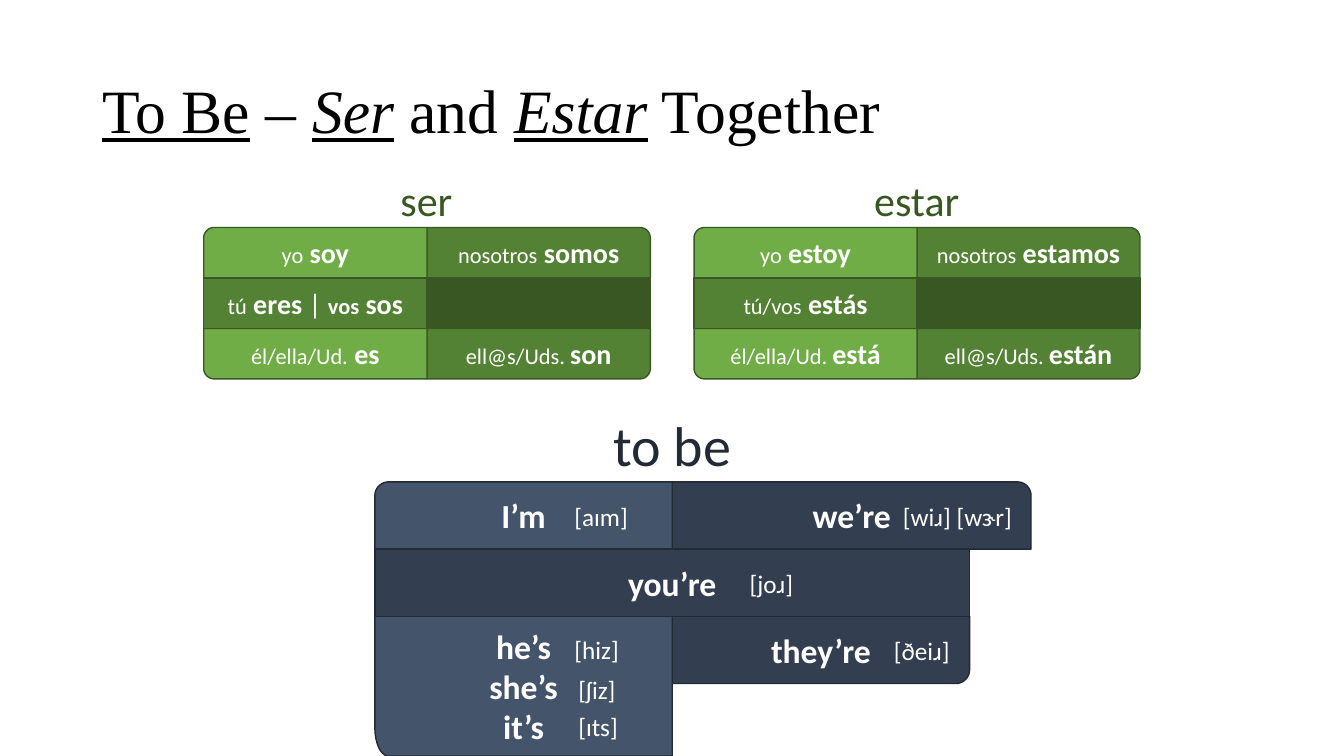
import math
from dataclasses import dataclass

import pptx
import pptx.dml.color
import pptx.enum.shapes
import pptx.enum.text
import pptx.util

Pt = pptx.util.Pt
ALIGN = pptx.enum.text.PP_ALIGN
ANCHOR = pptx.enum.text.MSO_ANCHOR


@dataclass(frozen=True)
class Theme:
    black: str = "000000"
    white: str = "FFFFFF"
    green_light: str = "70AD47"
    green: str = "548235"
    green_dark: str = "385723"
    slate_light: str = "44546A"
    slate: str = "333F50"
    slate_dark: str = "222A35"
    title_font: str = "Times New Roman"
    body_font: str = "Calibri"
    title_size: int = 44
    english_heading: int = 40
    spanish_heading: int = 30
    english_verb: int = 24
    spanish_verb: int = 20
    phonetic: int = 18
    pronoun: int = 16


THEME = Theme()


def color(value):
    return pptx.dml.color.RGBColor.from_string(value)


def add_span(para, text, size=THEME.spanish_verb, fill=THEME.white,
             font=THEME.body_font, bold=False, italic=False, underline=False):
    span = para.add_run()
    span.text = text
    span.font.size = Pt(size)
    span.font.name = font
    span.font.color.rgb = color(fill)
    span.font.bold = bold
    span.font.italic = italic
    span.font.underline = underline


def write(shape, lines, align=ALIGN.CENTER, anchor=ANCHOR.MIDDLE, wrap=True,
          line_spacing=None, **style):
    """Write lines, each a list of (text, format) spans, into a shape."""
    frame = shape.text_frame
    frame.word_wrap = wrap
    frame.vertical_anchor = anchor
    for number, spans in enumerate(lines):
        para = frame.add_paragraph() if number else frame.paragraphs[0]
        para.alignment = align
        if line_spacing:
            para.line_spacing = line_spacing
        for text, extra in spans:
            add_span(para, text, **{**style, **extra})


def add_label(page, box, text, align=ALIGN.LEFT, **style):
    shape = page.shapes.add_textbox(*map(Pt, box))
    write(shape, [[(text, {})]], align=align, anchor=ANCHOR.TOP, wrap=False, **style)
    shape.text_frame.auto_size = pptx.enum.text.MSO_AUTO_SIZE.SHAPE_TO_FIT_TEXT


def corner_outline(box, corner, radius):
    """Points of a rectangle with one arc; corners run clockwise from top left."""
    left, top, width, height = box
    radius_x, radius_y = radius
    points = []
    for index, (right, low) in enumerate([(0, 0), (1, 0), (1, 1), (0, 1)]):
        x, y = left + right * width, top + low * height
        if index != corner:
            points.append((x, y))
            continue
        center_x = x + (1 - 2 * right) * radius_x
        center_y = y + (1 - 2 * low) * radius_y
        for step in range(13):
            angle = math.radians(180 + 90 * index + 7.5 * step)
            points.append((center_x + radius_x * math.cos(angle),
                           center_y + radius_y * math.sin(angle)))
    return [(Pt(x), Pt(y)) for x, y in points]


def add_cell(page, box, fill, line, lines=(), corner=None, radius=(7.5, 7.5), **style):
    if corner is None:
        kind = pptx.enum.shapes.MSO_SHAPE.RECTANGLE
        shape = page.shapes.add_shape(kind, *map(Pt, box))
    else:
        start, *others = corner_outline(box, corner, radius)
        builder = page.shapes.build_freeform(*start)
        builder.add_line_segments(others, close=True)
        shape = builder.convert_to_shape()
    shape.shadow.inherit = False
    shape.fill.solid()
    shape.fill.fore_color.rgb = color(fill)
    shape.line.color.rgb = color(line)
    shape.line.width = Pt(1)
    write(shape, lines, **style)


def conjugated(pronoun, verb):
    return [(pronoun, {"size": THEME.pronoun}), (verb, {"bold": True})]


def add_title(page, box):
    shape = page.shapes.add_textbox(*map(Pt, box))
    verb = {"italic": True, "underline": True}
    spans = [("To Be", {"underline": True}), (" – ", {}), ("Ser", verb),
             (" and ", {}), ("Estar", verb), (" Together", {})]
    write(shape, [spans], align=ALIGN.LEFT, line_spacing=0.9, font=THEME.title_font,
          size=THEME.title_size, fill=THEME.black)


def add_spanish_panel(page, box, heading, heading_box, cells):
    """Draw a 2 by 3 grid; cells maps (row, column) to spans."""
    left, top, width, height = box
    cell_width, cell_height = width / 2, height / 3
    corners = {(0, 0): 0, (0, 1): 1, (2, 1): 2, (2, 0): 3}
    for row in (0, 2, 1):
        for column in (1, 0):
            shades = (THEME.green_light, THEME.green, THEME.green_dark)
            spans = cells.get((row, column))
            add_cell(page, (left + column * cell_width, top + row * cell_height,
                            cell_width, cell_height),
                     shades[column + row % 2], THEME.green_dark,
                     [spans] if spans else [], corners.get((row, column)))
    x, y, w, h = heading_box
    add_label(page, (left + x, top + y, w, h), heading, align=ALIGN.CENTER,
              size=THEME.spanish_heading, fill=THEME.green_dark)


def add_english_panel(page, box):
    left, top, width, height = box
    column, row = width / 2, 48
    round_corner = (9.75, 9.75)
    cells = [
        ((column, 0, 256.3, row), THEME.slate, ["we’re"], 1, round_corner),
        ((0, 0, column, row), THEME.slate_light, ["I’m"], 0, round_corner),
        ((column, 2 * row, column, row), THEME.slate, ["they’re"], 2, round_corner),
        ((0, 2 * row, column, height - 2 * row), THEME.slate_light,
         ["he’s", "she’s", "it’s"], 3, (9.75, 20)),
        ((0, row, width, row), THEME.slate, ["you’re"], None, None),
    ]
    for (x, y, w, h), fill, words, corner, radius in cells:
        add_cell(page, (left + x, top + y, w, h), fill, THEME.slate_dark,
                 [[(word, {})] for word in words], corner, radius,
                 size=THEME.english_verb, bold=True)
    add_label(page, (left + 162.6, top - 54.8, 99.5, 55.7), "to be",
              align=ALIGN.CENTER, size=THEME.english_heading, fill=THEME.slate_dark)
    phonetics = [("[aɪm]", 135.4, 10, 54), ("[hiz]", 135.4, 105.1, 46.8),
                 ("[joɹ]", 260.6, 58.3, 46), ("[ʃiz]", 138.2, 133.9, 41),
                 ("[ɪts]", 138.2, 160.5, 43.9), ("[wiɹ] [wɝr]", 370.1, 10, 94.3),
                 ("[ðeiɹ]", 363.6, 105.8, 54.7)]
    for text, x, y, w in phonetics:
        add_label(page, (left + x, top + y, w, 29), text, size=THEME.phonetic)


def main():
    deck = pptx.Presentation()
    deck.slide_width, deck.slide_height = Pt(960), Pt(540)
    page = deck.slides.add_slide(deck.slide_layouts[6])
    add_title(page, (66, 28.75, 828, 104.4))
    add_spanish_panel(page, (145.5, 162.5, 319, 108.2), "ser", (133.1, -41.5, 52, 43.6), {
        (0, 0): conjugated("yo", " soy"),
        (0, 1): conjugated("nosotros", " somos"),
        (1, 0): conjugated("tú", " eres ") + [
            ("| ", {}), ("vos", {"size": THEME.pronoun, "bold": True}),
            (" sos", {"bold": True})],
        (2, 0): conjugated("él/ella/Ud.", " es"),
        (2, 1): conjugated("ell@s/Uds. ", "son"),
    })
    add_spanish_panel(page, (495.8, 162.5, 318.5, 108.2), "estar", (121.2, -41.5, 75.6, 43.6), {
        (0, 0): conjugated("yo", " estoy"),
        (0, 1): conjugated("nosotros", " estamos"),
        (1, 0): conjugated("tú/vos", " estás"),
        (2, 0): conjugated("él/ella/Ud. ", "está"),
        (2, 1): conjugated("ell@s/Uds. ", "están"),
    })
    add_english_panel(page, (267.8, 344.2, 424.8, 195.8))
    deck.save("out.pptx")


if __name__ == "__main__":
    main()
